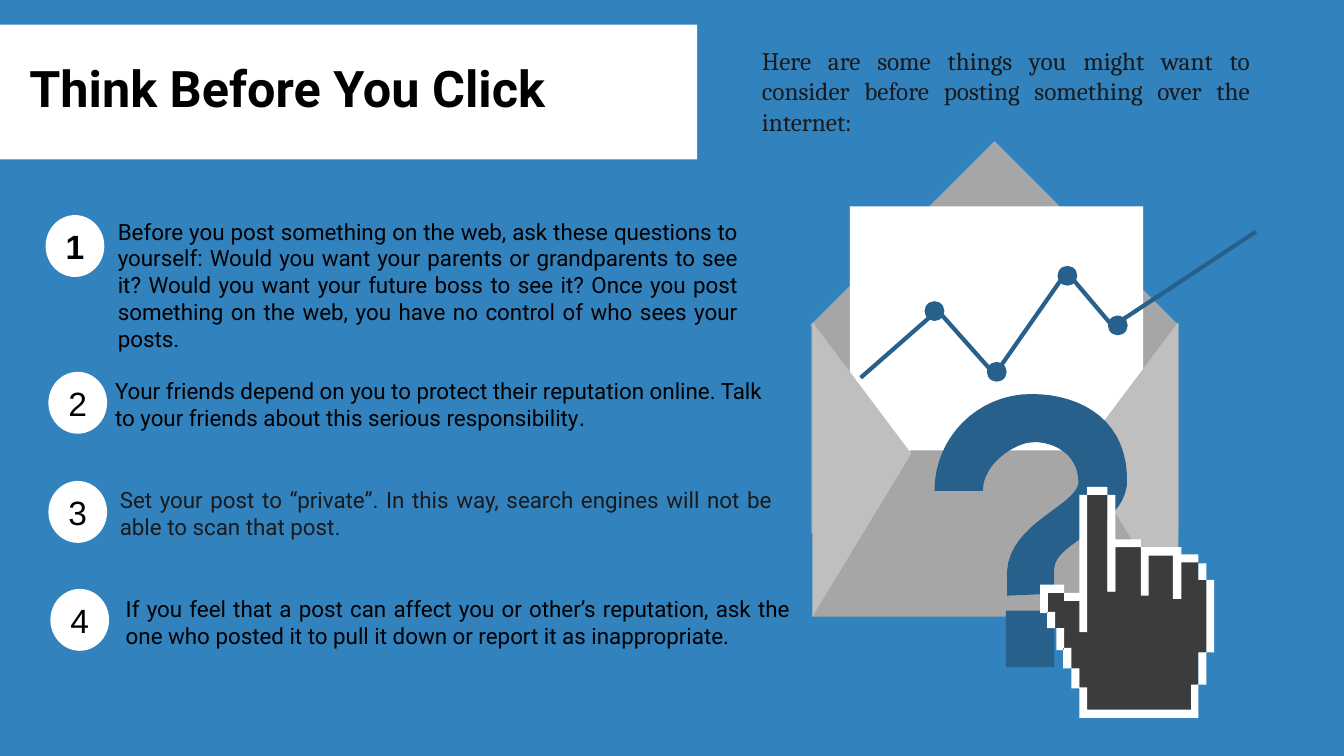
from pptx import Presentation
from pptx import util as u
from pptx.dml.color import RGBColor
from pptx.enum import shapes, text

BLUE = RGBColor(0x32, 0x82, 0xBE)
NAVY = RGBColor(0x28, 0x60, 0x8C)
WHITE = RGBColor(0xFF, 0xFF, 0xFF)
GREY = RGBColor(0xA6, 0xA6, 0xA6)
PALE = RGBColor(0xBF, 0xBF, 0xBF)
DARK = RGBColor(0x3C, 0x3C, 0x3C)
INK = RGBColor(0x1A, 0x1A, 0x1A)
BLACK = RGBColor(0, 0, 0)
KIND = shapes.MSO_SHAPE
LEFT, MID, JUST = text.PP_ALIGN.LEFT, text.PP_ALIGN.CENTER, text.PP_ALIGN.JUSTIFY

ITEMS = [
    (1.15, 5.42, 2.72, 5.36, 16.13, 5, JUST, BLACK, [(
        "Before you post something on the web, ask these questions to yourself: "
        "Would you want your parents or grandparents to see it? Would you want your "
        "future boss to see it? Once you post something on the web, you have no "
        "control of who sees your posts.", "Roboto")]),
    (1.22, 9.37, 2.65, 9.37, 17.22, 2, LEFT, BLACK, [(
        "Your friends depend on you to protect their reputation online. Talk to your "
        "friends about this serious responsibility", "Roboto"), (".", "Arial")]),
    (1.22, 12.12, 2.77, 12.12, 16.94, 2, JUST, INK, [(
        "Set your post to “private”. In this way, search engines will not be able "
        "to scan that post.", "Roboto")]),
    (1.27, 14.84, 2.92, 14.88, 17.25, 2, JUST, BLACK, [(
        "If you feel that a post can affect you or other’s reputation, ask the one "
        "who posted it to pull it down or report it as inappropriate.", "Roboto")]),
]
TREND = [(1.24, 4.32), (3.18, 2.62), (4.62, 4.24), (6.43, 1.65), (7.59, 3.02), (11.2, 0.64)]
DOTS = [(3.1, 2.64), (4.67, 4.17), (6.45, 1.75), (7.72, 3)]
MARK = [
    [(3.73, 0), (4.93, 0.69), (4.85, 2.31)],
    [(4.7, 3.38), (3.05, 3.73), (3.02, 4.39)],
    [(3.02, 5.03)],
    [(1.83, 5.08)],
    [(1.83, 4.47)],
    [(1.9, 3.25), (3.56, 2.82), (3.63, 2.24)],
    [(3.63, 1.4), (2.82, 1.17), (2.44, 1.22)],
    [(2.03, 1.24), (1.22, 1.75), (1.22, 2.44)],
    [(0, 2.44)],
    [(0, 1.09), (1.09, 0), (2.44, 0)],
]
PALM = [
    (1.19, 0.2), (1.7, 0.2), (1.7, 2.64), (1.9, 2.64), (1.9, 1.52), (2.54, 1.52),
    (2.54, 2.64), (2.72, 2.64), (2.72, 1.68), (3.35, 1.68), (3.35, 2.64), (3.38, 2.64),
    (3.38, 1.88), (3.99, 1.88), (3.99, 2.34), (4.34, 2.34), (4.34, 4.17), (3.99, 4.17),
    (3.99, 4.98), (3.89, 4.98), (3.89, 5.66), (1.12, 5.66), (1.12, 5.08), (0.99, 5.08),
    (0.99, 4.57), (0.74, 4.57), (0.74, 4.06), (0.48, 4.06), (0.48, 3.56), (0.28, 3.56),
    (0.28, 3.18), (0.03, 3.18), (0.03, 2.67), (0.66, 2.67), (0.66, 2.72), (1.12, 2.74),
    (1.12, 2.64), (1.19, 2.64),
]
EDGES = [
    (3.99, 4.17, 4.19, 4.98), (3.81, 4.98, 3.99, 5.82), (0.99, 5.61, 3.81, 5.82),
    (0.99, 5.05, 1.19, 5.61), (0.79, 4.57, 0.99, 5.08), (0.58, 4.06, 0.79, 4.57),
    (0.41, 3.56, 0.61, 4.11), (0.18, 3.15, 0.38, 3.56), (0, 2.46, 0.2, 3.18),
    (0.2, 2.46, 0.61, 2.67), (0.61, 2.67, 0.99, 2.87), (0.99, 0.2, 1.19, 3.66),
    (1.19, 0, 1.7, 0.2), (1.7, 0.2, 1.9, 2.64), (1.9, 1.32, 2.54, 1.52),
    (2.54, 1.52, 2.74, 2.74), (2.74, 1.52, 3.35, 1.73), (3.35, 1.52, 3.56, 2.82),
    (3.56, 1.7, 3.99, 1.9), (3.99, 1.93, 4.19, 2.34), (4.19, 2.34, 4.39, 4.17),
]


def form(page, kind, x, y, w, h, fill, turn=0, adj=None):
    """Add a plain filled preset shape."""
    part = page.shapes.add_shape(kind, u.Cm(x), u.Cm(y), u.Cm(w), u.Cm(h))
    part.shadow.inherit = False
    part.fill.solid()
    part.fill.fore_color.rgb = fill
    part.line.fill.background()
    part.rotation = turn
    if adj is not None:
        part.adjustments[0] = adj
    return part


def trace(page, x, y, loops, fill=None):
    """Draw closed filled loops, or an open navy line when no fill is given."""
    loops = [[(u.Cm(x + a), u.Cm(y + b)) for a, b in loop] for loop in loops]
    pen = page.shapes.build_freeform(*loops[0][0])
    for i, loop in enumerate(loops):
        if i:
            pen.move_to(*loop[0])
        pen.add_line_segments(loop[1:], close=fill is not None)
    part = pen.convert_to_shape()
    part.shadow.inherit = False
    if fill is None:
        part.fill.background()
        part.line.color.rgb = NAVY
        part.line.width = u.Pt(3)
    else:
        part.fill.solid()
        part.fill.fore_color.rgb = fill
        part.line.fill.background()


def bend(start, legs, steps=16):
    """Turn straight and cubic legs into a list of points."""
    points = [start]
    for leg in legs:
        if len(leg) == 1:
            points += leg
            continue
        knots = [points[-1], *leg]
        for i in range(1, steps + 1):
            t = i / steps
            mix = ((1 - t) ** 3, 3 * t * (1 - t) ** 2, 3 * t * t * (1 - t), t ** 3)
            points.append(tuple(sum(m * k[d] for m, k in zip(mix, knots)) for d in (0, 1)))
    return points


def write(frame, runs, size, color, align, bold=False):
    """Fill the first paragraph of a frame, run by run."""
    frame.word_wrap = True
    para = frame.paragraphs[0]
    para.alignment = align
    for words, face in runs:
        run = para.add_run()
        run.text = words
        run.font.name = face
        run.font.size = u.Pt(size)
        run.font.bold = bold
        run.font.color.rgb = color


def label(page, x, y, w, h, *style, **more):
    """Add a text box and return its frame."""
    frame = page.shapes.add_textbox(u.Cm(x), u.Cm(y), u.Cm(w), u.Cm(h)).text_frame
    write(frame, *style, **more)
    return frame


def clear(frame):
    """Set all insets of a frame to nothing."""
    frame.margin_left = frame.margin_right = frame.margin_top = frame.margin_bottom = 0


def letter(page, x, y):
    """Draw the open envelope with its trend line."""
    form(page, KIND.RECTANGLE, x, y + 3, 9.25, 5.23, GREY)
    form(page, KIND.RIGHT_TRIANGLE, x + 1.32, y - 0.28, 6.58, 6.58, GREY, 135)
    form(page, KIND.RECTANGLE, x + 0.97, y, 7.39, 10.19, WHITE)
    form(page, KIND.TRAPEZOID, x, y + 6.15, 9.3, 4.19, GREY, adj=0.595)
    for dx, turn, adj in ((-2.44, 90, 0.447), (4.29, 270, 0.553)):
        form(page, KIND.ISOSCELES_TRIANGLE, x + dx, y + 5.38, 7.42, 2.49, PALE, turn, adj)
    trace(page, x, y, [TREND])
    for dx, dy in DOTS:
        form(page, KIND.OVAL, x + dx - 0.25, y + dy - 0.25, 0.5, 0.5, NAVY)


def query(page, x, y):
    """Draw the question mark."""
    trace(page, x, y, [bend((2.44, 0), MARK)], NAVY)
    form(page, KIND.RECTANGLE, x + 1.8, y + 5.46, 1.22, 1.42, NAVY)


def hand(page, x, y):
    """Draw the pixel hand and its white edge."""
    trace(page, x, y, [PALM], DARK)
    bars = [[(a, b), (c, b), (c, d), (a, d)] for a, b, c, d in EDGES]
    trace(page, x, y, bars, WHITE)


def banner(page, x, y, w, h):
    """Draw the title on its white band."""
    form(page, KIND.RECTANGLE, x, y, w, h, WHITE)
    clear(label(page, x + 0.74, y + 0.83, 16.1, 1.5,
                [("Think Before You Click", "Roboto")], 36, BLACK, LEFT, bold=True))


def advice(page):
    """Place the numbered badges and their texts."""
    for i, (bx, by, x, y, w, lines, align, color, runs) in enumerate(ITEMS, 1):
        badge = form(page, KIND.OVAL, bx, by, 1.48, 1.56, WHITE).text_frame
        clear(badge)
        badge.vertical_anchor = text.MSO_ANCHOR.MIDDLE
        write(badge, [(str(i), "Arial")], 24, BLACK, MID, bold=i == 1)
        label(page, x, y, w, lines * 0.68 + 0.25, runs, 16, color, align)


def main():
    """Build and save the slide."""
    deck = Presentation()
    deck.slide_width, deck.slide_height = u.Cm(33.87), u.Cm(19.05)
    page = deck.slides.add_slide(deck.slide_layouts[6])
    page.background.fill.solid()
    page.background.fill.fore_color.rgb = BLUE
    letter(page, 20.45, 5.2)
    query(page, 23.55, 9.93)
    hand(page, 26.21, 12.27)
    banner(page, 0, 0.62, 17.57, 3.4)
    advice(page)
    label(page, 18.95, 1.02, 12.8, 2.57, [(
        "Here are some things you might want to consider before posting something "
        "over the internet:", "Cambria")], 18, INK, JUST)
    deck.save("out.pptx")


if __name__ == "__main__":
    main()
